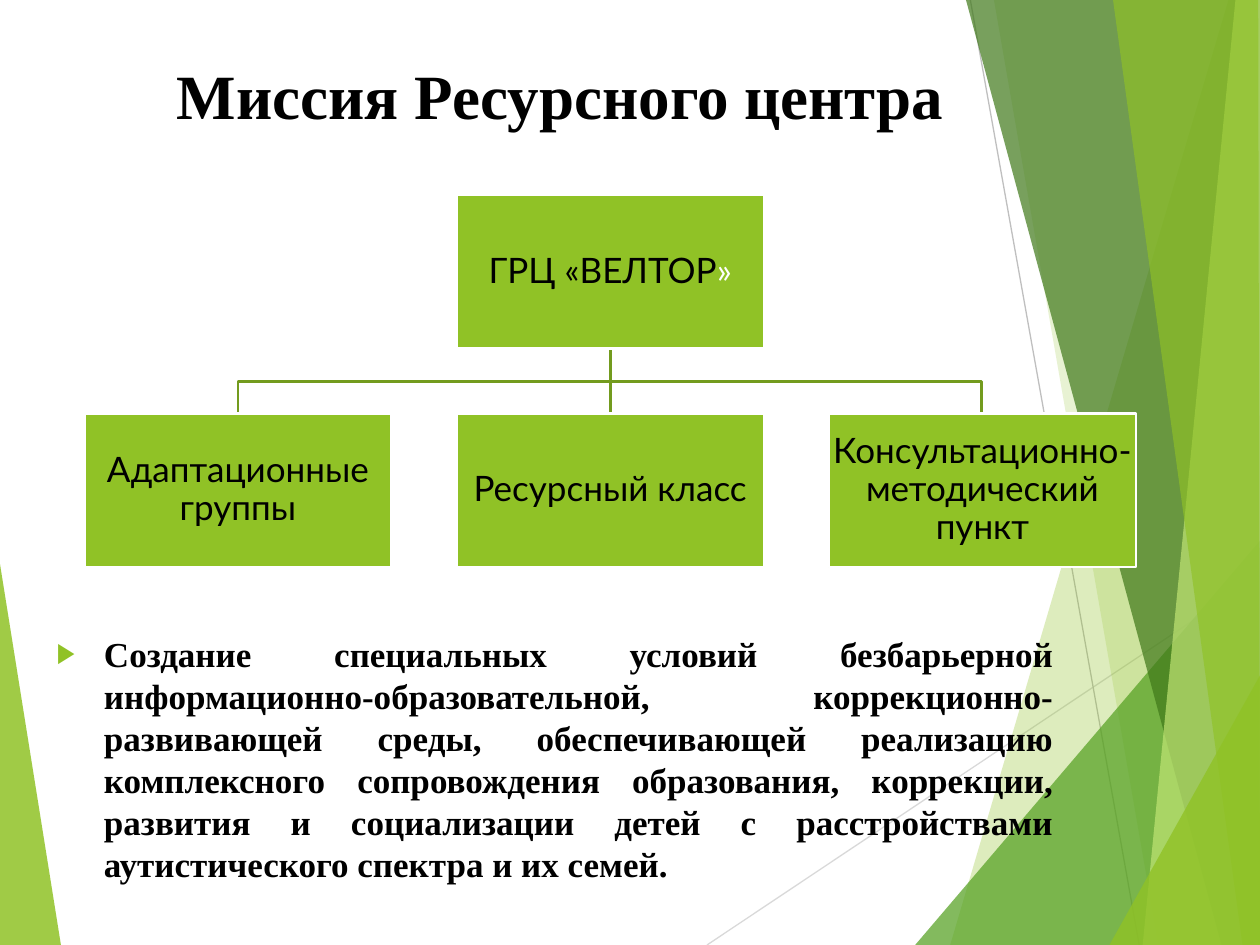
from lxml import etree
from pptx import Presentation
from pptx.dml.color import RGBColor
from pptx.enum import shapes, text
from pptx.oxml.ns import qn
from pptx.util import Pt

GREEN = RGBColor(0x90, 0xC2, 0x26)
LEAF = RGBColor(0x54, 0xA0, 0x21)
DARK = RGBColor(0x3F, 0x78, 0x19)
LIGHT = RGBColor(0xC0, 0xE4, 0x74)
BRANCH = RGBColor(0x73, 0x9B, 0x1E)
GREY = RGBColor(0xBF, 0xBF, 0xBF)
PALE_GREY = RGBColor(0xD9, 0xD9, 0xD9)
BLACK = RGBColor(0, 0, 0)
WHITE = RGBColor(0xFF, 0xFF, 0xFF)

prs = Presentation()
prs.slide_width, prs.slide_height = Pt(720), Pt(540)
s = prs.slides.add_slide(prs.slide_layouts[1])


def add_line(x1, y1, x2, y2, color, width):
    c = s.shapes.add_connector(shapes.MSO_CONNECTOR.STRAIGHT, Pt(x1), Pt(y1), Pt(x2), Pt(y2))
    c.line.color.rgb = color
    c.line.width = Pt(width)
    etree.SubElement(c.element.spPr, qn("a:effectLst"))


def add_path(points, close):
    fb = s.shapes.build_freeform(*points[0], scale=Pt(1))
    fb.add_line_segments(points[1:], close=close)
    sp = fb.convert_to_shape()
    sp.shadow.inherit = False
    return sp


add_line(404, 540, 720, 329, PALE_GREY, 0.75)
add_line(554.5, 0, 651, 540, GREY, 0.75)

facets = [
    ([(-0.7, 316), (35.3, 540.7), (-0.7, 540)], GREEN, 85),
    ([(702, 0), (543, 540), (720, 540), (720, 0)], GREEN, 30),
    ([(567.5, 0), (661.5, 540), (720, 540), (720, 0)], GREEN, 20),
    ([(522.7, 540), (720, 309), (720, 540)], LEAF, 72),
    ([(552.3, 0), (698.5, 540), (720, 540), (720, 0)], DARK, 70),
    ([(706.3, 0), (653, 540), (720, 540), (720, 0)], LIGHT, 70),
    ([(636, 0), (710, 540), (720, 540), (718.6, 0)], GREEN, 65),
    ([(634.5, 540), (720, 385.5), (720, 540)], GREEN, 80),
]
for points, color, opacity in facets:
    sp = add_path(points, True)
    sp.fill.solid()
    sp.fill.fore_color.rgb = color
    sp.line.fill.background()
    clr = sp.element.spPr.find(qn("a:solidFill"))[0]
    etree.SubElement(clr, qn("a:alpha"), val=str(opacity * 1000))

title, body = s.placeholders
blocks = [
    (title, (25.2, 28.8, 589.7, 103.7), "Миссия Ресурсного центра", 36, text.PP_ALIGN.CENTER),
    (body, (25.2, 357.8, 583.9, 157.7),
     "Создание специальных условий безбарьерной информационно-образовательной, "
     "коррекционно-развивающей среды, обеспечивающей реализацию комплексного "
     "сопровождения образования, коррекции, развития и социализации детей с "
     "расстройствами аутистического спектра и их семей.", 20, text.PP_ALIGN.JUSTIFY),
]
for sp, box, words, size, align in blocks:
    s.shapes.element.append(sp.element)
    sp.left, sp.top, sp.width, sp.height = [Pt(v) for v in box]
    tf = sp.text_frame
    tf.text = words
    tf.auto_size = text.MSO_AUTO_SIZE.NONE
    tf.vertical_anchor = text.MSO_ANCHOR.TOP
    p = tf.paragraphs[0]
    p.alignment = align
    p.space_before = Pt(0)
    f = p.runs[0].font
    f.name, f.size, f.bold = "Times New Roman", Pt(size), True
    f.color.rgb = BLACK

p = body.text_frame.paragraphs[0]
pPr = p._p.get_or_add_pPr()
pPr.set("marL", str(Pt(27)))
pPr.set("indent", str(-Pt(27)))
bu_clr = etree.SubElement(pPr, qn("a:buClr"))
etree.SubElement(bu_clr, qn("a:srgbClr"), val=str(GREEN))
etree.SubElement(pPr, qn("a:buSzPct"), val="80000")
etree.SubElement(pPr, qn("a:buFont"), typeface="Arial")
etree.SubElement(pPr, qn("a:buChar"), char="▶")

box_w, box_h = 175.6, 87.8
left, pitch = 48.2, 212.7
root_top, child_top = 111.5, 236.3
root_bottom = root_top + box_h
mid_y = (root_bottom + child_top) / 2
centers = [left + box_w / 2 + i * pitch for i in range(3)]
root_x = centers[1]

for x in (centers[0], centers[2]):
    sp = add_path([(root_x, root_bottom), (root_x, mid_y), (x, mid_y), (x, child_top)], False)
    sp.fill.background()
    sp.line.color.rgb = BRANCH
    sp.line.width = Pt(1.5)
add_line(root_x, root_bottom, root_x, child_top, BRANCH, 1.5)

nodes = [(root_x, root_top, ["ГРЦ «ВЕЛТОР", "»"])]
labels = ["Адаптационные группы", "Ресурсный класс", "Консультационно-методический пункт"]
nodes += [(x, child_top, [label]) for x, label in zip(centers, labels)]
for x, top, parts in nodes:
    sp = s.shapes.add_shape(shapes.MSO_SHAPE.RECTANGLE, Pt(x - box_w / 2), Pt(top), Pt(box_w), Pt(box_h))
    sp.shadow.inherit = False
    sp.fill.solid()
    sp.fill.fore_color.rgb = GREEN
    sp.line.color.rgb = WHITE
    sp.line.width = Pt(1.5)
    tf = sp.text_frame
    tf.word_wrap = True
    tf.vertical_anchor = text.MSO_ANCHOR.MIDDLE
    tf.margin_left = tf.margin_right = tf.margin_top = tf.margin_bottom = Pt(1)
    p = tf.paragraphs[0]
    p.alignment = text.PP_ALIGN.CENTER
    p.line_spacing = 0.9
    for part, color in zip(parts, (BLACK, WHITE)):
        r = p.add_run()
        r.text = part
        r.font.name, r.font.size = "Lato", Pt(20)
        r.font.color.rgb = color

prs.save("out.pptx")
